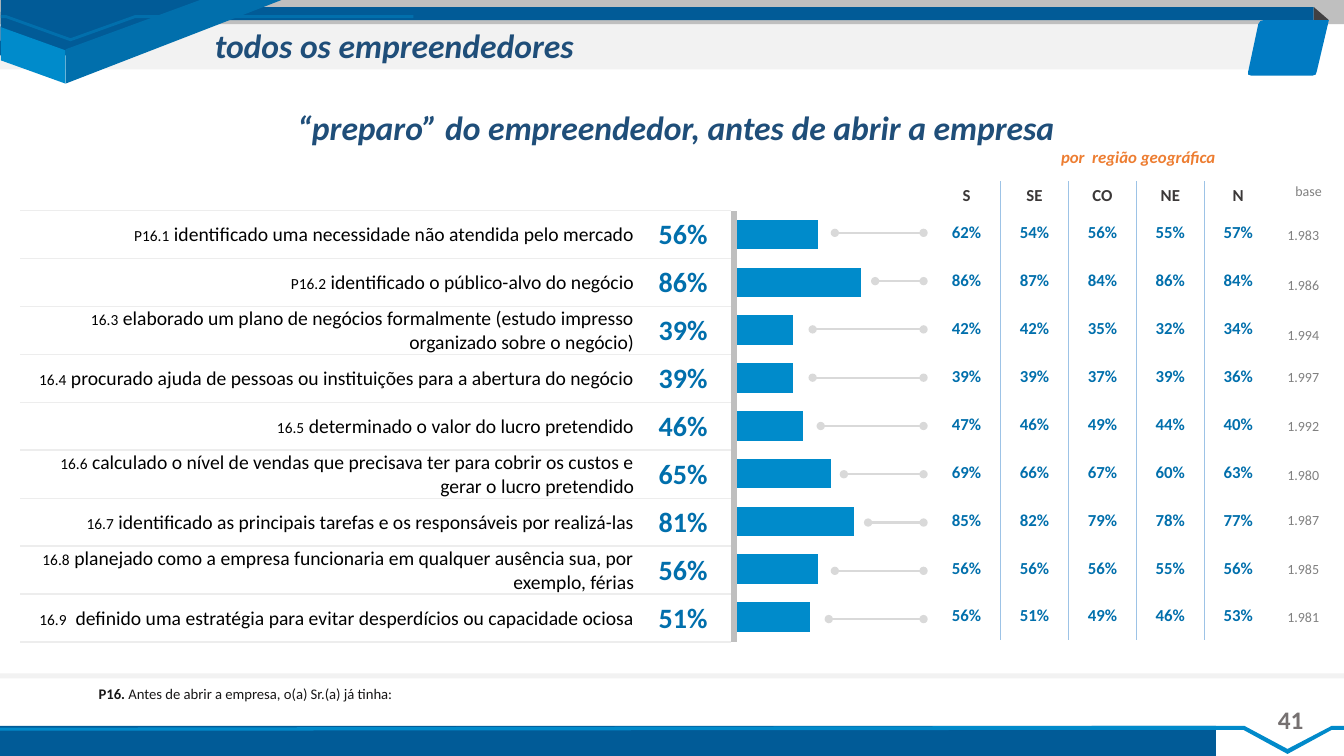
from pptx import Presentation
from pptx.chart.data import CategoryChartData
from pptx.dml.color import RGBColor
from pptx.enum.chart import XL_CHART_TYPE
from pptx.enum.shapes import MSO_CONNECTOR, MSO_SHAPE
from pptx.enum.text import MSO_ANCHOR, PP_ALIGN
from pptx.oxml import parse_xml
from pptx.oxml.ns import nsdecls
from pptx.util import Inches, Pt

LEFT, CENTER, RIGHT = PP_ALIGN.LEFT, PP_ALIGN.CENTER, PP_ALIGN.RIGHT
TOP, MIDDLE = MSO_ANCHOR.TOP, MSO_ANCHOR.MIDDLE
RECT, STRAIGHT = MSO_SHAPE.RECTANGLE, MSO_CONNECTOR.STRAIGHT
BAR = XL_CHART_TYPE.BAR_CLUSTERED
FONT = "Calibri"
COLORS = {
    "pale": "F2F2F2", "silver": "BFBFBF", "navy": "015B97", "blue": "016FAC",
    "sky": "008BCB", "ribbon": "018ACA", "badge": "007BC3", "fold": "414042",
    "title": "1F4E79", "orange": "ED7D31", "black": "000000", "note": "181717",
    "page": "767171", "base": "808080", "head": "3B3838", "row": "EDEDED",
    "column": "9DC3E6", "leader": "D9D9D9",
}

QUESTIONS = [
    ("P16.1", " identificado uma necessidade não atendida pelo mercado", "56%"),
    ("P16.2", " identificado o público-alvo do negócio", "86%"),
    ("16.3", " elaborado um plano de negócios formalmente (estudo impresso organizado sobre o negócio)", "39%"),
    ("16.4", " procurado ajuda de pessoas ou instituições para a abertura do negócio", "39%"),
    ("16.5", " determinado o valor do lucro pretendido", "46%"),
    ("16.6", " calculado o nível de vendas que precisava ter para cobrir os custos e gerar o lucro pretendido", "65%"),
    ("16.7", " identificado as principais tarefas e os responsáveis por realizá-las", "81%"),
    ("16.8", " planejado como a empresa funcionaria em qualquer ausência sua, por exemplo, férias", "56%"),
    ("16.9", "  definido uma estratégia para evitar desperdícios ou capacidade ociosa", "51%"),
]
BAR_VALUES = [65, 100, 45, 45, 53, 76, 94, 65, 59]
REGIONS = ["S", "SE", "CO", "NE", "N"]
REGION_VALUES = [
    [62, 54, 56, 55, 57], [86, 87, 84, 86, 84], [42, 42, 35, 32, 34],
    [39, 39, 37, 39, 36], [47, 46, 49, 44, 40], [69, 66, 67, 60, 63],
    [85, 82, 79, 78, 77], [56, 56, 56, 55, 56], [56, 51, 49, 46, 53],
]
LEADER_STARTS = [8.28, 8.68, 8.06, 8.06, 8.14, 8.37, 8.61, 8.28, 8.22]
BASES = [
    ("1.983", 2.22), ("1.986", 2.71), ("1.994", 3.21), ("1.997", 3.63), ("1.992", 4.11),
    ("1.980", 4.6), ("1.987", 5.04), ("1.985", 5.53), ("1.981", 6.01),
]


def rgb(name):
    """Return the named colour."""
    return RGBColor.from_string(COLORS[name])


class SlideBuilder:
    """Draws styled elements on the current slide."""

    def __init__(self, s):
        """Keep the slide to draw on."""
        self.s = s

    def paint(self, sp, color):
        """Give a shape a flat fill without line or shadow."""
        sp.shadow.inherit = False
        sp.fill.solid()
        sp.fill.fore_color.rgb = rgb(color)
        sp.line.fill.background()

    def band(self, x, y, w, h, color):
        """Draw a plain rectangle."""
        self.paint(self.s.shapes.add_shape(RECT, Inches(x), Inches(y), Inches(w), Inches(h)), color)

    def outline(self, points, color):
        """Draw a closed polygon."""
        start, *rest = [(Inches(x), Inches(y)) for x, y in points]
        fb = self.s.shapes.build_freeform(*start)
        fb.add_line_segments(rest, close=True)
        self.paint(fb.convert_to_shape(), color)

    def put_runs(self, tf, runs, align=LEFT, spacing=None):
        """Fill one paragraph from (text, size, colour, bold, italic) runs."""
        p = tf.paragraphs[0]
        p.alignment = align
        if spacing:
            p.line_spacing = spacing
        for text, size, color, bold, italic in runs:
            r = p.add_run()
            r.text = text
            f = r.font
            f.name, f.size, f.bold, f.italic = FONT, Pt(size), bold, italic
            f.color.rgb = rgb(color)

    def title(self, x, y, w, h, run):
        """Fill the title placeholder and bring it to the front."""
        sp = self.s.shapes.title
        sp.left, sp.top, sp.width, sp.height = Inches(x), Inches(y), Inches(w), Inches(h)
        sp.text_frame.vertical_anchor = TOP
        self.put_runs(sp.text_frame, [run], LEFT, 0.9)
        self.s.shapes.element.append(sp.element)

    def text(self, x, y, w, h, runs, align=LEFT, spacing=None, wrap=True):
        """Add a text box."""
        tf = self.s.shapes.add_textbox(Inches(x), Inches(y), Inches(w), Inches(h)).text_frame
        tf.word_wrap = wrap
        self.put_runs(tf, runs, align, spacing)

    def table(self, x, y, widths, heights):
        """Add an unbanded table."""
        table = self.s.shapes.add_table(len(heights), len(widths), Inches(x), Inches(y),
                                        Inches(sum(widths)), Inches(sum(heights))).table
        table.first_row = table.horz_banding = False
        for column, w in zip(table.columns, widths):
            column.width = Inches(w)
        for row, h in zip(table.rows, heights):
            row.height = Inches(h)
        return table

    def cell(self, cell, runs, align=CENTER, sides="", color=None, fill=None):
        """Fill a cell, with 1 pt borders on the given sides (L, R, T, B)."""
        cell.margin_left = cell.margin_right = cell.margin_top = Inches(0.01)
        cell.margin_bottom = 0
        cell.vertical_anchor = MIDDLE
        self.put_runs(cell.text_frame, runs, align)
        tc_pr = cell._tc.get_or_add_tcPr()
        for side in "LRTB":
            paint = "<a:noFill/>"
            if side in sides:
                paint = f'<a:solidFill><a:srgbClr val="{COLORS[color]}"/></a:solidFill>'
            tc_pr.append(parse_xml(f'<a:ln{side} {nsdecls("a")} w="12700">{paint}</a:ln{side}>'))
        if fill:
            cell.fill.solid()
            cell.fill.fore_color.rgb = rgb(fill)
        else:
            cell.fill.background()

    def bars(self, x, y, w, h, values, top):
        """Add a bar chart without axes."""
        data = CategoryChartData()
        data.categories = [str(i + 1) for i in range(len(values))]
        data.add_series("Series 1", values)
        chart = self.s.shapes.add_chart(BAR, Inches(x), Inches(y), Inches(w), Inches(h), data).chart
        chart.has_title = chart.has_legend = False
        chart.font.name, chart.font.size = FONT, Pt(10)
        chart.font.color.rgb = rgb("black")
        category, value = chart.category_axis, chart.value_axis
        category.reverse_order = True
        value.minimum_scale, value.maximum_scale = 0, top
        value.has_major_gridlines = False
        category.visible = value.visible = False
        plot = chart.plots[0]
        plot.gap_width, plot.vary_by_categories = 62, False
        plot.series[0].format.fill.solid()
        plot.series[0].format.fill.fore_color.rgb = rgb("sky")
        area = chart.element.find(".//{*}plotArea")
        for old in area.findall("{*}layout"):
            area.remove(old)
        area.insert(0, parse_xml(
            f'<c:layout {nsdecls("c")}><c:manualLayout><c:layoutTarget val="inner"/>'
            '<c:xMode val="edge"/><c:yMode val="edge"/><c:x val="0.033"/><c:y val="0"/>'
            '<c:w val="0.967"/><c:h val="1"/></c:manualLayout></c:layout>'))

    def leader(self, x1, x2, y):
        """Draw a level line with round ends."""
        c = self.s.shapes.add_connector(STRAIGHT, Inches(x1), Inches(y), Inches(x2), Inches(y))
        c.line.color.rgb = rgb("leader")
        c.line.width = Pt(1.5)
        for end in ("headEnd", "tailEnd"):
            c.line._get_or_add_ln().append(parse_xml(f'<a:{end} {nsdecls("a")} type="oval"/>'))
        c.element.spPr.append(parse_xml(f'<a:effectLst {nsdecls("a")}/>'))


def main():
    """Build the slide."""
    prs = Presentation()
    prs.slide_width, prs.slide_height = Inches(13.33), Inches(7.5)
    b = SlideBuilder(prs.slides.add_slide(prs.slide_layouts[5]))

    b.band(0, 0.15, 12.9, 0.54, "pale")
    b.band(0, -0.03, 13.34, 0.27, "silver")
    b.band(1.13, 0.07, 11.9, 0.13, "navy")
    b.outline([(0.01, -0.02), (2.59, -0.02), (1.29, 0.55), (0, 0.55)], "navy")
    b.band(-0.04, 6.68, 13.37, 0.05, "pale")
    b.outline([(2.87, -0.03), (2.04, -0.02), (0.65, 0.49), (0.65, 0.83)], "blue")
    b.outline([(0.65, 0.5), (0.01, 0.27), (0.01, 0.6), (0.65, 0.83)], "sky")
    b.band(-0.04, 7.2, 12.1, 0.35, "navy")
    b.outline([(-0.17, 7.22), (12.34, 7.2), (12.77, 7.43), (13.21, 7.2), (13.33, 7.2), (13.33, 7.24),
               (13.21, 7.24), (12.77, 7.48), (12.33, 7.24), (-0.18, 7.25)], "ribbon")
    b.outline([(0.01, 0.15), (0.06, 0.15), (0.7, 0.38), (1.34, 0.15), (4.1, 0.15), (4.1, 0.18),
               (1.34, 0.18), (0.7, 0.41), (0.06, 0.18), (0.01, 0.18)], "blue")
    b.outline([(13.03, 0.2), (13.03, 0.07), (13.18, 0.2)], "fold")
    b.outline([(12.53, 0.2), (13.18, 0.2), (13.06, 0.71), (13.05, 0.74), (13.02, 0.75), (12.41, 0.75),
               (12.38, 0.74), (12.38, 0.71), (12.48, 0.24), (12.5, 0.21)], "badge")

    b.title(2.03, 0.24, 10.41, 0.51, ("todos os empreendedores", 24, "title", True, True))
    b.text(2.84, 1.06, 7.73, 0.53,
           [("“preparo” do empreendedor, antes de abrir a empresa", 24, "title", True, True)], CENTER, 0.9)
    b.text(10.24, 1.43, 2.1, 0.24, [("por  região geográfica", 12, "orange", True, True)], CENTER, 0.9)
    b.text(0.88, 6.74, 10.55, 0.73, [("P16. ", 10.5, "note", True, False), (
        "Antes de abrir a empresa, o(a) Sr.(a) já tinha:", 10.5, "note", False, False)])
    b.text(12.49, 6.94, 0.62, 0.4, [("41", 18, "page", True, False)], CENTER, wrap=False)

    questions = b.table(0.2, 2.09, [6.1, 0.95, 0.06], [4.27 / 9] * 9)
    for i, (code, wording, share) in enumerate(QUESTIONS):
        b.cell(questions.cell(i, 0), [(code, 11, "black", False, False),
                                      (wording, 14, "black", False, False)], RIGHT, "TB", "row")
        b.cell(questions.cell(i, 1), [(share, 20, "blue", True, False)], CENTER, "TB", "row")
        b.cell(questions.cell(i, 2), [], fill="silver")
    b.bars(7.26, 2.09, 1.48, 4.27, BAR_VALUES, 116)

    regions = b.table(9.25, 1.8, [3.37 / 5] * 5, [0.27] + [4.28 / 9] * 9)
    lines = [REGIONS] + [[f"{v}%" for v in row] for row in REGION_VALUES]
    for i, line in enumerate(lines):
        for j, text in enumerate(line):
            sides = ("L" if j > 0 else "") + ("R" if j < len(line) - 1 else "")
            b.cell(regions.cell(i, j), [(text, 12, "blue" if i else "head", True, False)],
                   CENTER, sides, "column")

    for i, x in enumerate(LEADER_STARTS):
        b.leader(9.16, x, 2.31 + 0.479 * i)
    b.text(12.75, 1.78, 0.6, 0.29, [("base", 10, "base", False, False)], LEFT, 0.9)
    for base, y in BASES:
        b.text(12.67, y, 0.6, 0.24, [(base, 10, "base", False, False)], LEFT, 0.9)

    prs.save("out.pptx")


if __name__ == "__main__":
    main()
